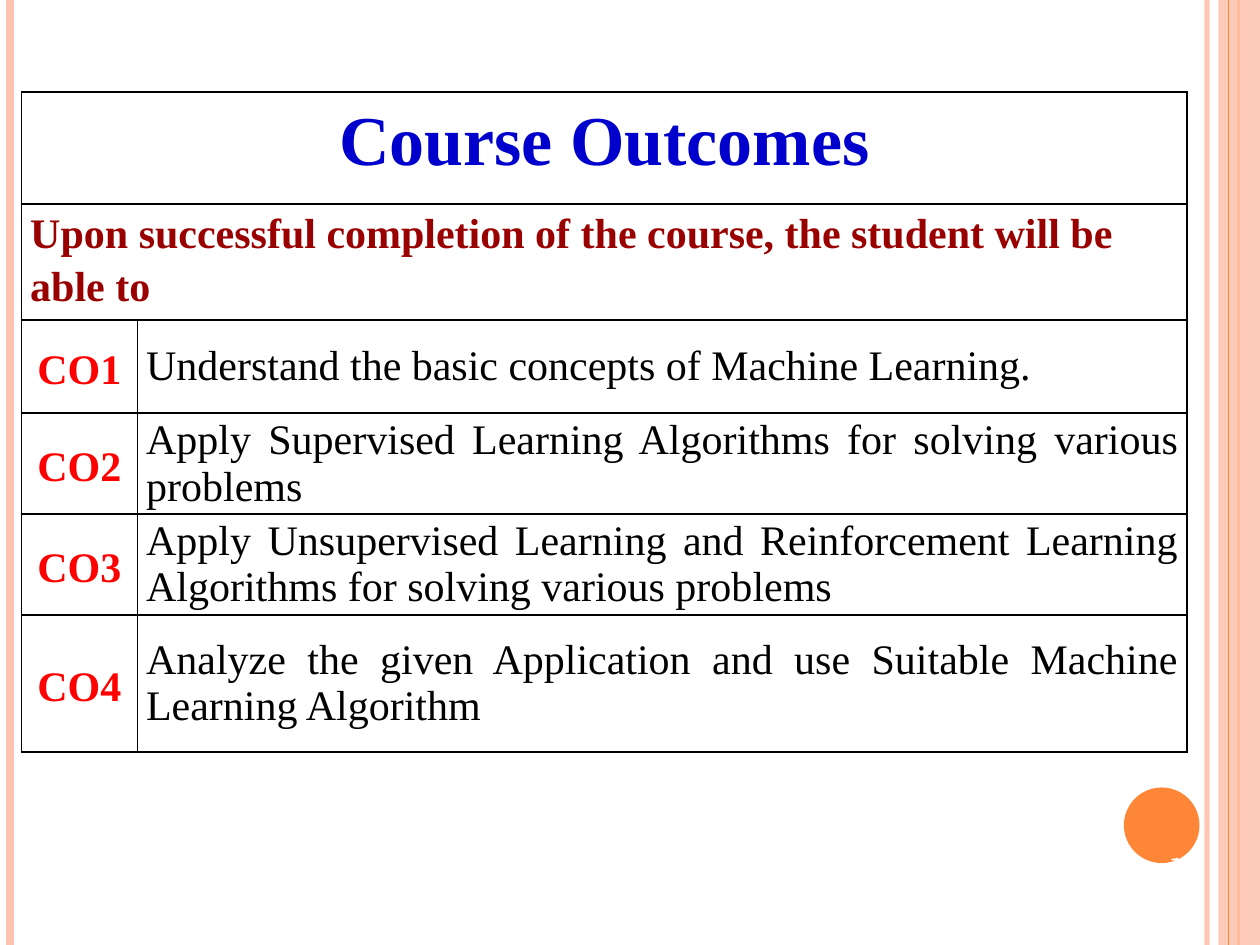
from dataclasses import dataclass

from lxml.etree import SubElement
from pptx import Presentation
from pptx.dml.color import RGBColor
from pptx.enum.shapes import MSO_CONNECTOR, MSO_SHAPE
from pptx.enum.text import MSO_ANCHOR, PP_ALIGN
from pptx.oxml import parse_xml
from pptx.oxml.ns import nsdecls, qn
from pptx.util import Inches, Pt

ORANGE = RGBColor(0xFE, 0x86, 0x37)
PEACH = RGBColor(0xFE, 0xC3, 0xAE)
BLUE = RGBColor(0x00, 0x00, 0xCC)
MAROON = RGBColor(0x99, 0x00, 0x00)
RED = RGBColor(0xFF, 0x00, 0x00)
BLACK = RGBColor(0x00, 0x00, 0x00)
WHITE = RGBColor(0xFF, 0xFF, 0xFF)

SLIDE_WIDTH, SLIDE_HEIGHT = 10, 7.5
COLUMN_WIDTHS = (0.92, 8.33)
ROW_HEIGHTS = (0.89, 0.53, 0.74, 0.78, 0.78, 1.09)
OUTCOMES = (
    "Understand the basic concepts of Machine Learning.",
    "Apply Supervised Learning Algorithms for solving various problems",
    "Apply Unsupervised Learning and Reinforcement Learning Algorithms for solving various problems",
    "Analyze the given Application and use Suitable Machine Learning Algorithm",
)
CELL_FORMAT = {
    "margin_left": Inches(0.07),
    "margin_right": Inches(0.07),
    "margin_top": 0,
    "margin_bottom": 0,
}


@dataclass(frozen=True)
class Stripe:
    x: float
    weight: float
    color: RGBColor
    opacity: int = 100


@dataclass(frozen=True)
class TextStyle:
    size: float
    color: RGBColor
    bold: bool = True
    name: str = "Times New Roman"
    alignment: PP_ALIGN = PP_ALIGN.LEFT
    line_spacing: float = 1.15
    anchor: MSO_ANCHOR = MSO_ANCHOR.MIDDLE


LEFT_STRIPES = (
    Stripe(9.58, 3, PEACH, 93),
    Stripe(0.08, 4.5, PEACH),
    Stripe(9.83, 1.5, ORANGE),
)
BAND_STRIPE = Stripe(9.75, 0.75, ORANGE)
TITLE = TextStyle(40, BLUE, alignment=PP_ALIGN.CENTER, anchor=MSO_ANCHOR.TOP)
LEAD = TextStyle(24, MAROON, anchor=MSO_ANCHOR.TOP)
CODE = TextStyle(24, RED, alignment=PP_ALIGN.CENTER)
OUTCOME = TextStyle(24, BLACK, bold=False, alignment=PP_ALIGN.JUSTIFY, line_spacing=1.0)
NUMBER = TextStyle(14, WHITE, name="Cambria", alignment=PP_ALIGN.CENTER, line_spacing=1.0)


def apply_format(target, values: dict) -> None:
    for name, value in values.items():
        setattr(target, name, value)


def set_opacity(element, percent: int) -> None:
    color = next(element.iter(qn("a:srgbClr")))
    SubElement(color, qn("a:alpha"), val=str(percent * 1000))


def add_stripe(slide, stripe: Stripe) -> None:
    x = Inches(stripe.x)
    line = slide.shapes.add_connector(MSO_CONNECTOR.STRAIGHT, x, 0, x, Inches(SLIDE_HEIGHT))
    line.line.width = Pt(stripe.weight)
    line.line.color.rgb = stripe.color
    properties = line._element.spPr
    if stripe.opacity < 100:
        set_opacity(properties, stripe.opacity)
    SubElement(properties, qn("a:effectLst"))


def add_filled_shape(slide, kind: MSO_SHAPE, box: tuple, color: RGBColor, opacity: int = 100) -> None:
    shape = slide.shapes.add_shape(kind, *map(Inches, box))
    shape.shadow.inherit = False
    shape.fill.solid()
    shape.fill.fore_color.rgb = color
    shape.line.fill.background()
    if opacity < 100:
        set_opacity(shape._element.spPr, opacity)


def write_text(text_frame, text: str, style: TextStyle) -> None:
    paragraph = text_frame.paragraphs[0]
    apply_format(paragraph, {"alignment": style.alignment, "line_spacing": style.line_spacing})
    run = paragraph.add_run()
    run.text = text
    apply_format(run.font, {"size": Pt(style.size), "bold": style.bold, "name": style.name})
    run.font.color.rgb = style.color


def style_cell(cell) -> None:
    apply_format(cell, CELL_FORMAT)
    cell.fill.background()
    properties = cell._tc.get_or_add_tcPr()
    for position, side in enumerate(("lnL", "lnR", "lnT", "lnB")):
        border = parse_xml(
            f'<a:{side} {nsdecls("a")} w="{Pt(1)}"><a:solidFill>'
            f'<a:srgbClr val="{BLACK}"/></a:solidFill></a:{side}>'
        )
        properties.insert(position, border)


def fill_cell(cell, text: str, style: TextStyle) -> None:
    cell.vertical_anchor = style.anchor
    write_text(cell.text_frame, text, style)


def add_outcomes_table(slide) -> None:
    table = slide.shapes.add_table(
        len(ROW_HEIGHTS), len(COLUMN_WIDTHS), Inches(0.17), Inches(0.73),
        Inches(sum(COLUMN_WIDTHS)), Inches(sum(ROW_HEIGHTS)),
    ).table
    apply_format(table, {"first_row": False, "horz_banding": False})
    for column, width in zip(table.columns, COLUMN_WIDTHS):
        column.width = Inches(width)
    for row, height in zip(table.rows, ROW_HEIGHTS):
        row.height = Inches(height)
    for cell in table.iter_cells():
        style_cell(cell)
    headings = (
        ("Course Outcomes", TITLE),
        ("Upon successful completion of the course, the student will be able to", LEAD),
    )
    for row, (text, style) in enumerate(headings):
        table.cell(row, 0).merge(table.cell(row, 1))
        fill_cell(table.cell(row, 0), text, style)
    for number, outcome in enumerate(OUTCOMES, start=1):
        row = len(headings) + number - 1
        fill_cell(table.cell(row, 0), f"CO{number}", CODE)
        fill_cell(table.cell(row, 1), outcome, OUTCOME)


def add_slide_number(slide) -> None:
    box = slide.shapes.add_textbox(Inches(8.92), Inches(6.33), Inches(0.94), Inches(1.07))
    apply_format(box.text_frame, {"word_wrap": True, "vertical_anchor": NUMBER.anchor})
    write_text(box.text_frame, "10", NUMBER)


def main() -> None:
    presentation = Presentation()
    presentation.slide_width = Inches(SLIDE_WIDTH)
    presentation.slide_height = Inches(SLIDE_HEIGHT)
    slide = presentation.slides.add_slide(presentation.slide_layouts[6])
    for stripe in LEFT_STRIPES:
        add_stripe(slide, stripe)
    add_filled_shape(slide, MSO_SHAPE.RECTANGLE, (9.67, 0, 0.33, SLIDE_HEIGHT), PEACH, 87)
    add_stripe(slide, BAND_STRIPE)
    add_filled_shape(slide, MSO_SHAPE.OVAL, (8.92, 6.25, 0.6, 0.6), ORANGE)
    add_slide_number(slide)
    add_outcomes_table(slide)
    presentation.save("out.pptx")


if __name__ == "__main__":
    main()
